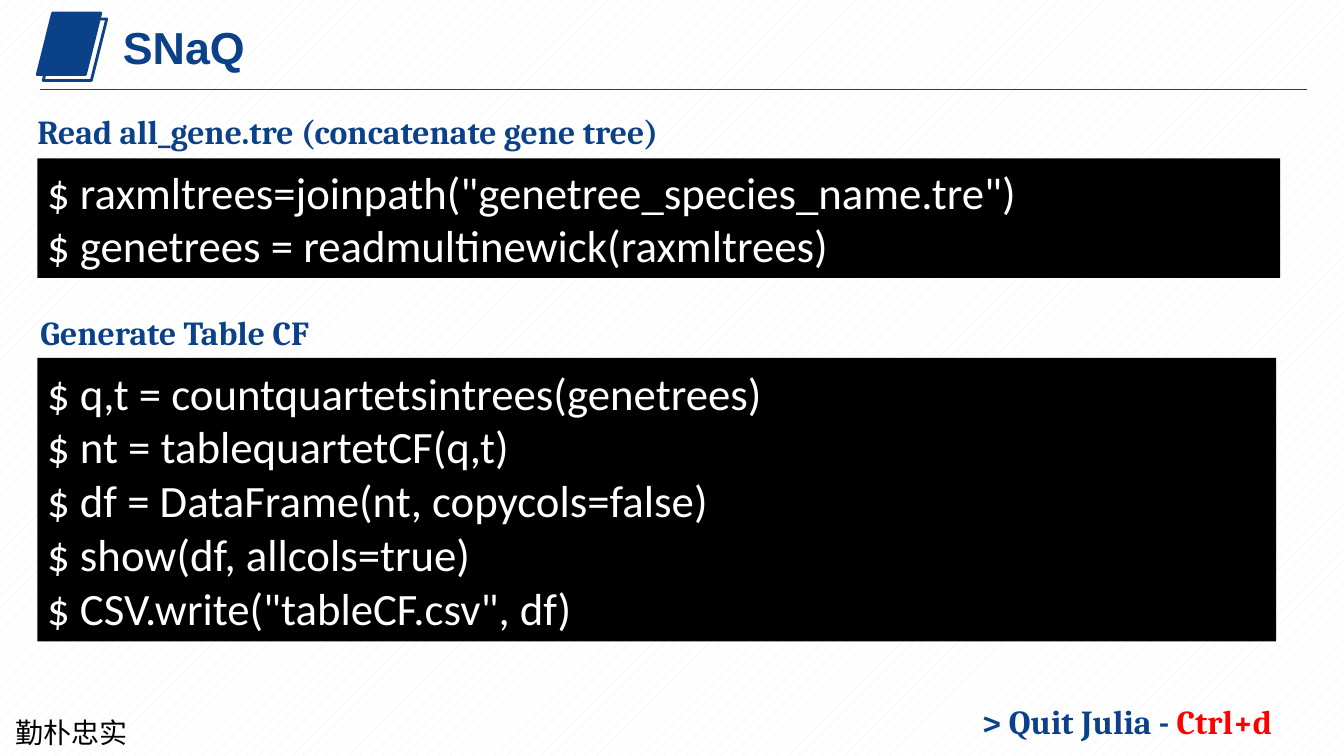
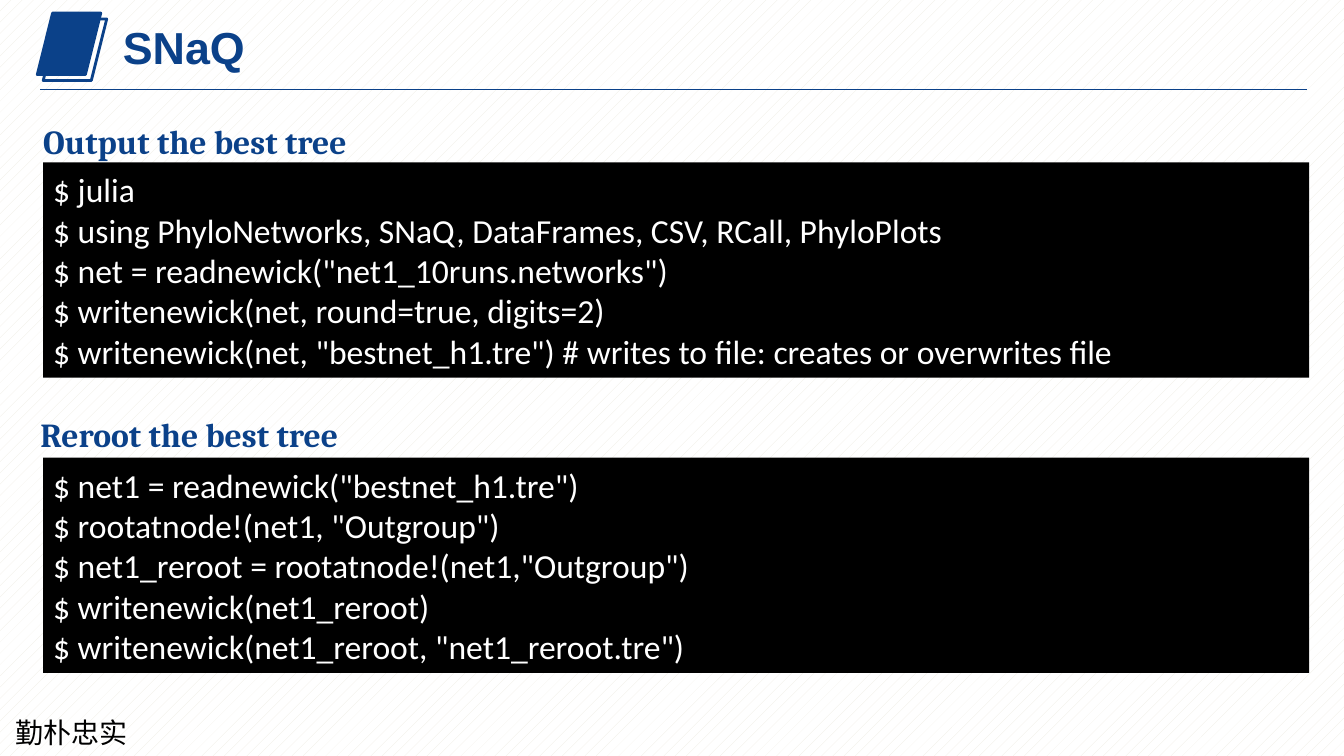
from dataclasses import dataclass

from lxml.etree import SubElement
from pptx import Presentation
from pptx.dml.color import RGBColor
from pptx.enum.dml import MSO_PATTERN
from pptx.enum.shapes import MSO_CONNECTOR, MSO_SHAPE
from pptx.enum.text import MSO_ANCHOR as ANCHOR, MSO_AUTO_SIZE, PP_ALIGN as ALIGN
from pptx.oxml.ns import qn
from pptx.util import Cm, Pt

BLUE, BLACK, WHITE, RED, CREAM = "0B4189", "000000", "FFFFFF", "FF0000", "EEECE1"
TITLE = {"size": Pt(32), "name": "Arial", "bold": True, "color": BLUE}
LABEL = {"size": Pt(24), "name": "Cambria", "bold": True, "color": BLUE}
MOTTO = {"size": Pt(20), "name": "Noto Sans CJK JP", "color": BLACK}
CODE = {"name": "Calibri", "color": WHITE}
LINE_RATIO = 1.22  # Calibri line height relative to its size
CODE_INSET = 0.13


@dataclass
class Section:
    """A label over a code block; positions and width in centimetres."""
    label: str
    label_at: tuple[float, float]
    code: list[str]
    code_at: tuple[float, float]
    code_width: float


@dataclass
class CodeSlide:
    code_size: int
    sections: list[Section]
    quit_hint: bool = False


SLIDES = [
    CodeSlide(32, [
        Section("Read all_gene.tre (concatenate gene tree)", (0.94, 2.44), [
            '$ raxmltrees=joinpath("genetree_species_name.tre")',
            "$ genetrees = readmultinewick(raxmltrees)",
        ], (0.94, 3.99), 31.32),
        Section("Generate Table CF", (1.02, 7.49), [
            "$ q,t = countquartetsintrees(genetrees)",
            "$ nt = tablequartetCF(q,t)",
            "$ df = DataFrame(nt, copycols=false)",
            "$ show(df, allcols=true)",
            '$ CSV.write("tableCF.csv", df)',
        ], (0.94, 9.02), 31.22),
    ], quit_hint=True),
    CodeSlide(24, [
        Section("Output the best tree", (1.09, 2.67), [
            "$ julia",
            "$ using PhyloNetworks, SNaQ, DataFrames, CSV, RCall, PhyloPlots",
            '$ net = readnewick("net1_10runs.networks")',
            "$ writenewick(net, round=true, digits=2)",
            '$ writenewick(net, "bestnet_h1.tre") # writes to file: creates or overwrites file',
        ], (1.09, 4.09), 31.9),
        Section("Reroot the best tree", (1.02, 10.06), [
            '$ net1 = readnewick("bestnet_h1.tre")',
            '$ rootatnode!(net1, "Outgroup")',
            '$ net1_reroot = rootatnode!(net1,"Outgroup")',
            "$ writenewick(net1_reroot)",
            '$ writenewick(net1_reroot, "net1_reroot.tre")',
        ], (1.09, 11.53), 31.9),
    ]),
]


def rgb(color: str) -> RGBColor:
    return RGBColor.from_string(color)


def format_font(font, style: dict) -> None:
    for key, value in style.items():
        if key == "color":
            font.color.rgb = rgb(value)
        else:
            setattr(font, key, value)


def add_run(p, text: str, style: dict) -> None:
    r = p.add_run()
    r.text = text
    format_font(r.font, style)


def add_box(slide, x: float, y: float, w: float, h: float):
    return slide.shapes.add_textbox(Cm(x), Cm(y), Cm(w), Cm(h))


def add_label(slide, x: float, y: float, w: float, runs: list[tuple[str, dict]]) -> None:
    tf = add_box(slide, x, y, w, 1.24).text_frame
    tf.word_wrap = True
    for side in ("left", "top", "right", "bottom"):
        setattr(tf, f"margin_{side}", 0)
    p = tf.paragraphs[0]
    p.alignment, p.line_spacing = ALIGN.JUSTIFY, Pt(39.2)
    for text, style in runs:
        add_run(p, text, style)


def add_code(slide, section: Section, size: int) -> None:
    """Draw a black block whose height follows its number of lines."""
    x, y = section.code_at
    height = Pt(len(section.code) * size * LINE_RATIO) + 2 * Cm(CODE_INSET)
    sp = slide.shapes.add_shape(MSO_SHAPE.RECTANGLE, Cm(x), Cm(y), Cm(section.code_width), height)
    sp.shadow.inherit = False
    sp.fill.solid()
    sp.fill.fore_color.rgb = rgb(BLACK)
    sp.line.fill.background()
    tf = sp.text_frame
    tf.word_wrap = True
    tf.vertical_anchor = ANCHOR.MIDDLE
    tf.margin_top = tf.margin_bottom = Cm(CODE_INSET)
    for i, line in enumerate(section.code):
        p = tf.add_paragraph() if i else tf.paragraphs[0]
        p.alignment = ALIGN.LEFT
        add_run(p, line, CODE | {"size": Pt(size)})


def add_motto(slide) -> None:
    sp = add_box(slide, 0.15, 17.9, 7.06, 1.12)
    sp.text_frame.word_wrap = True
    add_run(sp.text_frame.paragraphs[0], "勤朴忠实", MOTTO)
    for props in sp.element.iter(qn("a:rPr")):
        SubElement(props, qn("a:ea"), typeface=MOTTO["name"])


def add_header(slide) -> None:
    icon = slide.shapes.add_group_shape()
    for shift, filled in ((0, True), (0.15, False)):
        sp = icon.shapes.add_shape(MSO_SHAPE.PARALLELOGRAM, Cm(0.94 + shift), Cm(0.33 + shift),
                                   Cm(1.6), Cm(1.55))
        sp.shadow.inherit = False
        if filled:
            sp.fill.solid()
            sp.fill.fore_color.rgb = rgb(BLUE)
        else:
            sp.fill.background()
        sp.line.color.rgb, sp.line.width = rgb(BLUE), Pt(2)

    rule = slide.shapes.add_connector(MSO_CONNECTOR.STRAIGHT, Cm(1.02), Cm(2.26), Cm(32.94), Cm(2.26))
    rule.line.color.rgb, rule.line.width = rgb(BLUE), Pt(0.75)
    SubElement(rule.element.spPr, qn("a:effectLst"))

    title = slide.shapes.title
    title.left, title.top, title.width, title.height = Cm(2.84), Cm(0.38), Cm(3.6), Cm(1.63)
    tf = title.text_frame
    tf.word_wrap, tf.auto_size, tf.vertical_anchor = False, MSO_AUTO_SIZE.NONE, ANCHOR.TOP
    p = tf.paragraphs[0]
    p.alignment = ALIGN.LEFT
    add_run(p, "SNaQ", TITLE)


def build_slide(prs, content: CodeSlide) -> None:
    slide = prs.slides.add_slide(prs.slide_layouts.get_by_name("Title Only"))
    add_motto(slide)
    add_header(slide)
    for section in content.sections:
        add_label(slide, *section.label_at, 30.35, [(section.label, LABEL)])
        add_code(slide, section, content.code_size)
    if content.quit_hint:
        add_label(slide, 24.74, 17.3, 8.38,
                  [("> Quit Julia - ", LABEL), ("Ctrl+d", LABEL | {"color": RED})])


def main() -> None:
    prs = Presentation()
    prs.slide_width, prs.slide_height = Cm(33.87), Cm(19.05)
    fill = prs.slide_master.background.fill
    fill.patterned()
    fill.pattern = MSO_PATTERN.PERCENT_10
    fill.fore_color.rgb, fill.back_color.rgb = rgb(CREAM), rgb(WHITE)
    for content in SLIDES:
        build_slide(prs, content)
    prs.save("out.pptx")


if __name__ == "__main__":
    main()
